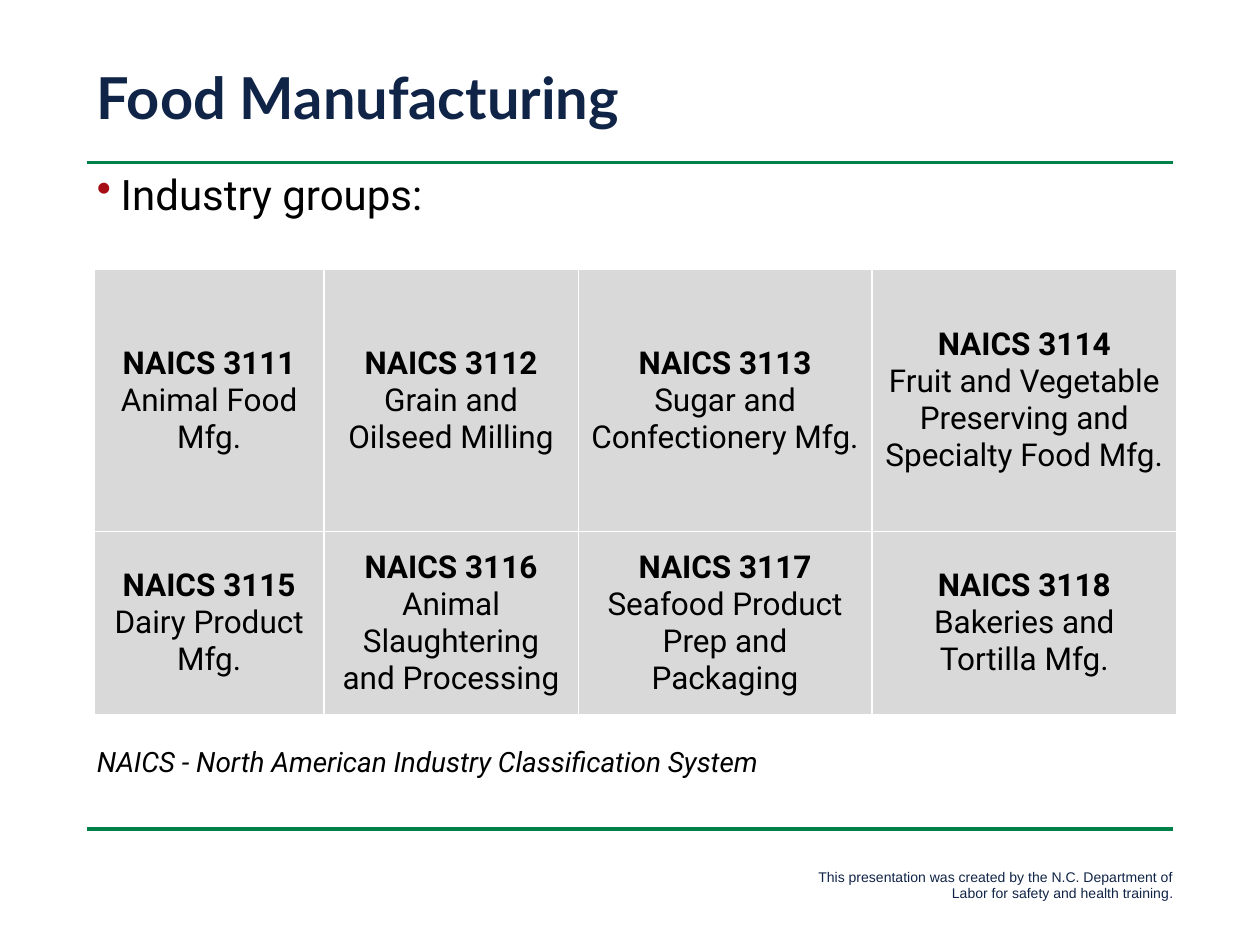
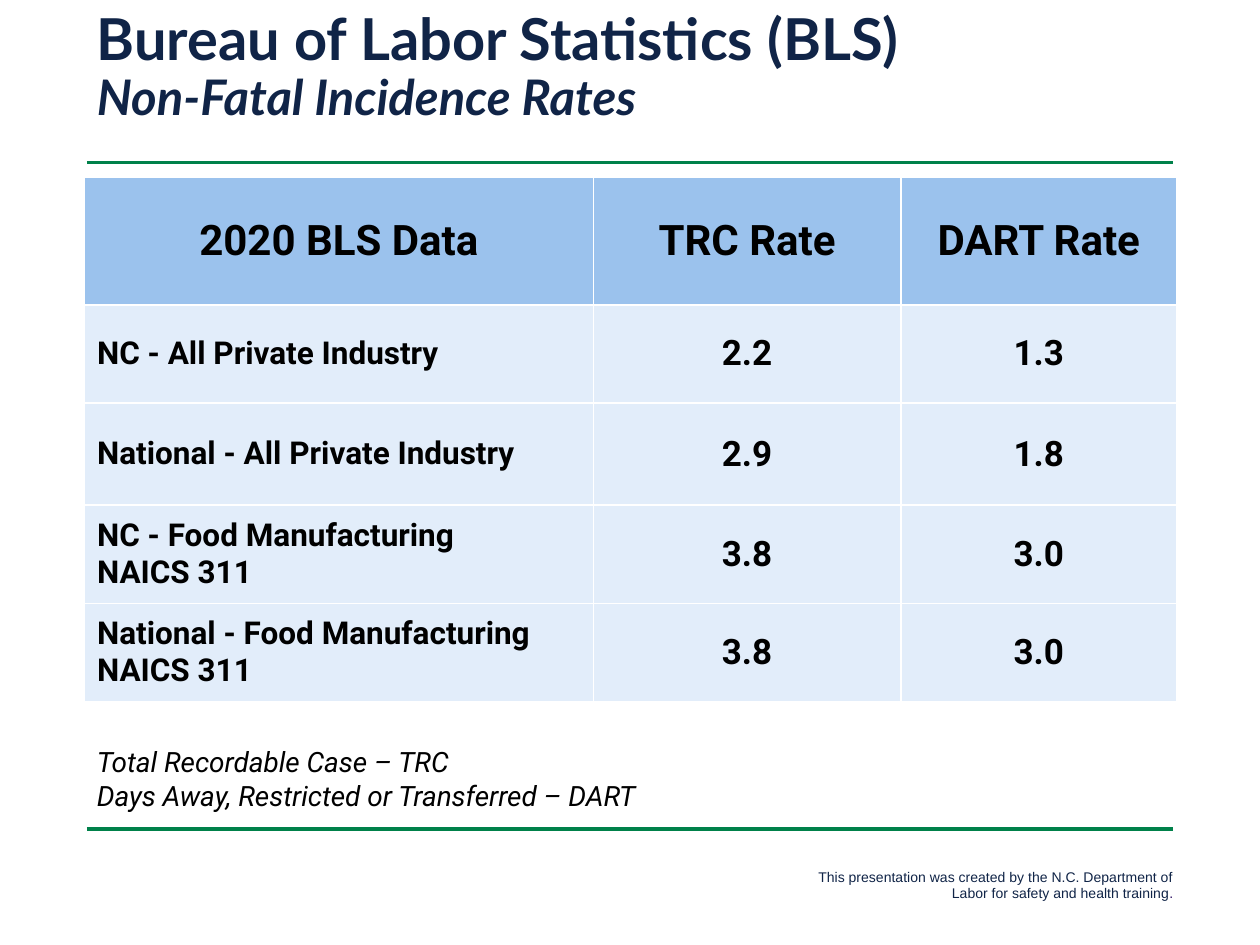
from dataclasses import dataclass, replace

from lxml import etree
from pptx import Presentation
from pptx.dml.color import RGBColor
from pptx.enum.shapes import MSO_CONNECTOR
from pptx.enum.text import MSO_ANCHOR, PP_ALIGN
from pptx.oxml.ns import qn
from pptx.slide import Slide
from pptx.table import Table, _Cell
from pptx.text.text import TextFrame, _Paragraph
from pptx.util import Inches, Pt

LEFT, CENTER, RIGHT = PP_ALIGN.LEFT, PP_ALIGN.CENTER, PP_ALIGN.RIGHT
TOP, MIDDLE = MSO_ANCHOR.TOP, MSO_ANCHOR.MIDDLE
STRAIGHT = MSO_CONNECTOR.STRAIGHT

COLORS = {
    "navy": "102447",
    "purple": "2B0E62",
    "green": "00814A",
    "red": "A70D15",
    "black": "000000",
    "white": "FFFFFF",
    "gray": "D9D9D9",
    "header blue": "9BC2ED",
    "pale blue": "E2EDFA",
}


@dataclass(frozen=True)
class Style:
    size: float
    font: str = "Roboto"
    color: str = "black"
    bold: bool = False
    italic: bool = False
    align: PP_ALIGN = LEFT
    spacing: float = 1.0


@dataclass(frozen=True)
class Line:
    text: str
    style: Style


@dataclass(frozen=True)
class Area:
    left: float
    top: float
    width: float
    height: float


TITLE = Style(33, "Lato", "navy", bold=True, spacing=0.9)
SUBTITLE = replace(TITLE, size=28, italic=True)
BODY = Style(24, spacing=0.9)
NOTE = Style(16, italic=True)
FOOTER = Style(8, "Arial", "navy", align=RIGHT)
GROUP_NAME = Style(18, align=CENTER)
GROUP_CODE = replace(GROUP_NAME, bold=True)
HEADING = Style(24, bold=True, align=CENTER)
ROW_LABEL = Style(18, bold=True)
RATE = Style(20, bold=True, align=CENTER)

RULE_LEFT, RULE_RIGHT = 0.69, 9.31
RULE_TOPS = (1.29, 6.58)
FOOTER_TEXT = ("This presentation was created by the N.C. Department of "
               "Labor for safety and health training")

INDUSTRY_GROUPS = [
    [("NAICS 3111", "Animal Food Mfg."),
     ("NAICS 3112", "Grain and Oilseed Milling"),
     ("NAICS 3113", "Sugar and Confectionery Mfg."),
     ("NAICS 3114", "Fruit and Vegetable Preserving and Specialty Food Mfg.")],
    [("NAICS 3115", "Dairy Product Mfg."),
     ("NAICS 3116", "Animal Slaughtering and Processing"),
     ("NAICS 3117", "Seafood Product Prep and Packaging"),
     ("NAICS 3118", "Bakeries and Tortilla Mfg.")],
]

RATE_HEADINGS = ["2020 BLS Data", "TRC Rate", "DART Rate"]
INCIDENCE_RATES = [
    (["NC - All Private Industry"], "2.2", "1.3"),
    (["National - All Private Industry"], "2.9", "1.8"),
    (["NC - Food Manufacturing", "NAICS 311"], "3.8", "3.0"),
    (["National - Food Manufacturing", "NAICS 311"], "3.8", "3.0"),
]


def rgb(name: str) -> RGBColor:
    return RGBColor.from_string(COLORS[name])


def format_paragraph(para: _Paragraph, style: Style) -> None:
    para.alignment = style.align
    para.line_spacing = style.spacing
    for span in para.runs:
        span.font.name = style.font
        span.font.size = Pt(style.size)
        span.font.bold = style.bold
        span.font.italic = style.italic
        span.font.color.rgb = rgb(style.color)


def write_lines(frame: TextFrame, lines: list[Line]) -> None:
    frame.text = "\n".join(line.text for line in lines)
    for para, line in zip(frame.paragraphs, lines):
        format_paragraph(para, line.style)


def add_text(slide: Slide, area: Area, lines: list[Line],
             anchor: MSO_ANCHOR = TOP) -> TextFrame:
    box = slide.shapes.add_textbox(Inches(area.left), Inches(area.top),
                                   Inches(area.width), Inches(area.height))
    frame = box.text_frame
    frame.word_wrap = True
    frame.vertical_anchor = anchor
    write_lines(frame, lines)
    return frame


def add_bullet(para: _Paragraph, color: str, indent: float) -> None:
    properties = para._p.get_or_add_pPr()
    properties.set("marL", str(Inches(indent)))
    properties.set("indent", str(-Inches(indent)))
    bullet_color = etree.SubElement(properties, qn("a:buClr"))
    etree.SubElement(bullet_color, qn("a:srgbClr"), val=COLORS[color])
    etree.SubElement(properties, qn("a:buChar"), char="•")


def add_rule(slide: Slide, top: float) -> None:
    rule = slide.shapes.add_connector(STRAIGHT, Inches(RULE_LEFT), Inches(top),
                                      Inches(RULE_RIGHT), Inches(top))
    rule.line.color.rgb = rgb("green")
    rule.line.width = Pt(2)
    etree.SubElement(rule._element.spPr, qn("a:effectLst"))


def add_page(deck: Presentation, title_area: Area, title: list[Line]) -> Slide:
    """Add a slide with the shared rules, footer and title."""
    slide = deck.slides.add_slide(deck.slide_layouts[6])
    for top in RULE_TOPS:
        add_rule(slide, top)
    footer = add_text(slide, Area(6.16, 6.84, 3.25, 0.37),
                      [Line(FOOTER_TEXT, FOOTER)]).paragraphs[0]
    footer.add_run().text = "."
    format_paragraph(footer, FOOTER)
    footer.runs[-1].font.color.rgb = rgb("purple")
    add_text(slide, title_area, title, MIDDLE)
    return slide


def add_grid(slide: Slide, left: float, top: float,
             widths: list[float], heights: list[float]) -> Table:
    frame = slide.shapes.add_table(len(heights), len(widths), Inches(left), Inches(top),
                                   Inches(sum(widths)), Inches(sum(heights)))
    table = frame.table
    for column, width in zip(table.columns, widths):
        column.width = Inches(width)
    for row, height in zip(table.rows, heights):
        row.height = Inches(height)
    return table


def fill_cell(cell: _Cell, lines: list[Line], fill: str, margin: float = 0.1) -> None:
    properties = cell._tc.get_or_add_tcPr()
    for side in ("lnL", "lnR", "lnT", "lnB"):
        border = etree.SubElement(properties, qn(f"a:{side}"), w=str(Pt(1)))
        solid = etree.SubElement(border, qn("a:solidFill"))
        etree.SubElement(solid, qn("a:srgbClr"), val=COLORS["white"])
    cell.fill.solid()
    cell.fill.fore_color.rgb = rgb(fill)
    cell.vertical_anchor = MIDDLE
    cell.margin_left = cell.margin_right = Inches(margin)
    write_lines(cell.text_frame, lines)


def add_industry_groups(deck: Presentation) -> None:
    slide = add_page(deck, Area(0.67, 0.5, 8.67, 0.6),
                     [Line("Food Manufacturing", TITLE)])
    body = add_text(slide, Area(0.67, 1.33, 9, 6.17), [Line("Industry groups:", BODY)])
    add_bullet(body.paragraphs[0], "red", 0.19)
    table = add_grid(slide, 0.75, 2.14, [1.82, 2.02, 2.33, 2.42], [2.08, 1.45])
    for row, groups in enumerate(INDUSTRY_GROUPS):
        for column, (code, name) in enumerate(groups):
            fill_cell(table.cell(row, column),
                      [Line(code, GROUP_CODE), Line(name, GROUP_NAME)], "gray", 0.09)
    add_text(slide, Area(0.67, 5.86, 5.75, 0.98),
             [Line("NAICS - North American Industry Classification System", NOTE)])


def add_incidence_rates(deck: Presentation) -> None:
    slide = add_page(deck, Area(0.67, 0.04, 8.75, 1),
                     [Line("Bureau of Labor Statistics (BLS)", TITLE),
                      Line("Non-Fatal Incidence Rates", SUBTITLE)])
    table = add_grid(slide, 0.67, 1.41, [4.04, 2.44, 2.19],
                     [1.01, 0.78, 0.81, 0.78, 0.78])
    for column, heading in enumerate(RATE_HEADINGS):
        fill_cell(table.cell(0, column), [Line(heading, HEADING)], "header blue")
    for row, (label, *rates) in enumerate(INCIDENCE_RATES, start=1):
        fill_cell(table.cell(row, 0), [Line(text, ROW_LABEL) for text in label],
                  "pale blue")
        for column, rate in enumerate(rates, start=1):
            fill_cell(table.cell(row, column), [Line(rate, RATE)], "pale blue")
    add_text(slide, Area(0.67, 5.86, 4.75, 1.25),
             [Line("Total Recordable Case – TRC", NOTE),
              Line("Days Away, Restricted or Transferred – DART", NOTE)])


def main() -> None:
    deck = Presentation()
    deck.slide_width, deck.slide_height = Inches(10), Inches(7.5)
    add_industry_groups(deck)
    add_incidence_rates(deck)
    deck.save("out.pptx")


if __name__ == "__main__":
    main()
